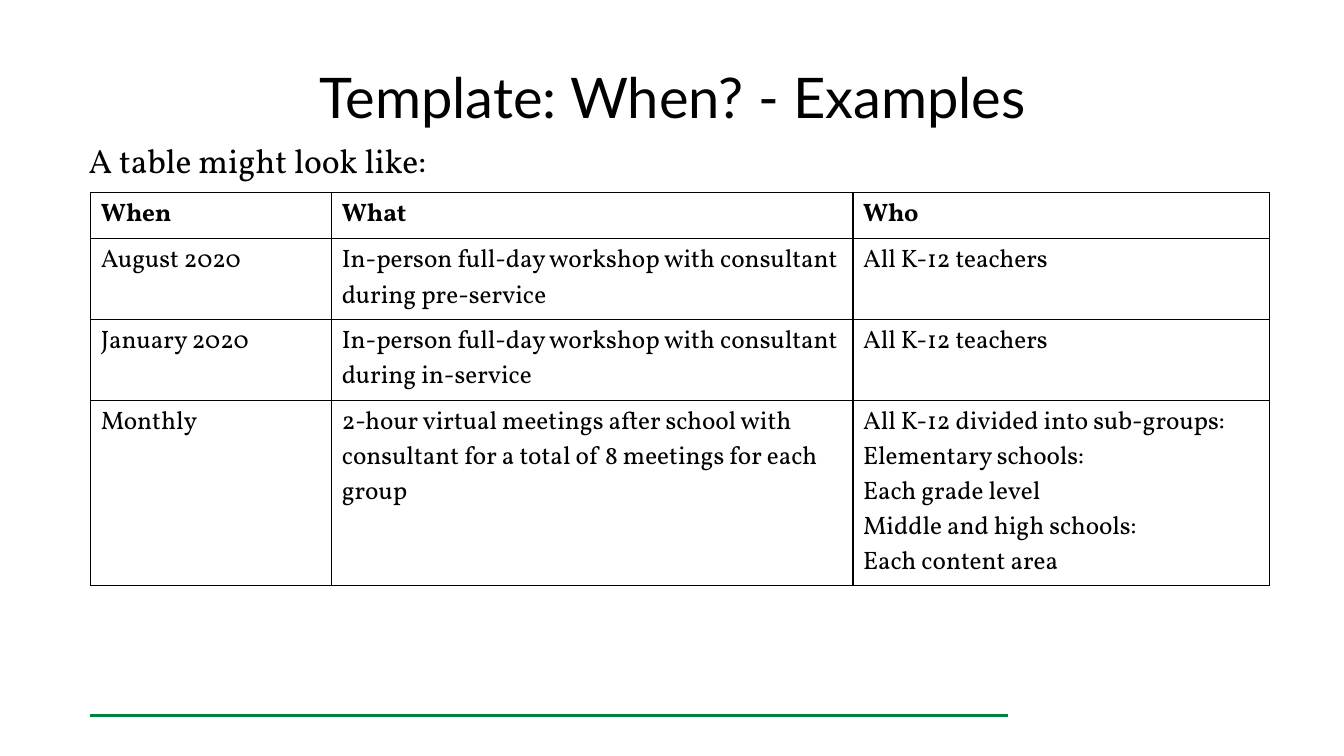
from dataclasses import dataclass

from lxml.etree import SubElement
from pptx import Presentation
from pptx.dml.color import RGBColor
from pptx.enum.shapes import MSO_CONNECTOR as Connector
from pptx.enum.text import MSO_ANCHOR as Anchor, MSO_AUTO_SIZE as AutoSize, PP_ALIGN as Align
from pptx.oxml.ns import qn
from pptx.util import Inches, Pt


@dataclass(frozen=True)
class Theme:
    heading_font: str = "Lato"
    body_font: str = "Vollkorn"
    title_size: int = 40
    lead_size: int = 24
    table_size: int = 18
    ink: str = "000000"
    accent: str = "00823E"
    border_width: float = 1
    rule_width: float = 2.25


SCHEDULE = [
    ("When", "What", "Who"),
    ("August 2020",
     "In-person full-day workshop with consultant during pre-service",
     "All K-12 teachers"),
    ("January 2020",
     "In-person full-day workshop with consultant during in-service",
     "All K-12 teachers"),
    ("Monthly",
     "2-hour virtual meetings after school with consultant for a total of 8 meetings for each group",
     "All K-12 divided into sub-groups:\nElementary schools:\nEach grade level\n"
     "Middle and high schools:\nEach content area"),
]
COLUMN_WIDTHS = (2.39, 5.17, 4.13)
ROW_HEIGHTS = (0.46, 0.8, 0.8, 1.84)


def write(frame, text, *, font, size, color, bold=False, align=Align.LEFT):
    """Fill a text frame, one paragraph for each line of text."""
    frame.word_wrap = True
    for index, line in enumerate(text.split("\n")):
        para = frame.add_paragraph() if index else frame.paragraphs[0]
        para.alignment = align
        para.space_before = Pt(0)
        span = para.add_run()
        span.text = line
        span.font.name = font
        span.font.size = Pt(size)
        span.font.bold = bold
        span.font.color.rgb = RGBColor.from_string(color)


def add_borders(cell, color, width):
    properties = cell._tc.get_or_add_tcPr()
    for position, side in enumerate(("lnL", "lnR", "lnT", "lnB")):
        border = properties.makeelement(qn(f"a:{side}"), {"w": str(Pt(width))})
        fill = SubElement(border, qn("a:solidFill"))
        SubElement(fill, qn("a:srgbClr"), val=color)
        properties.insert(position, border)


class SlideBuilder:
    def __init__(self, page, theme):
        self.page = page
        self.theme = theme

    def place(self, box, left, top, width, height):
        box.left, box.top = Inches(left), Inches(top)
        box.width, box.height = Inches(width), Inches(height)
        box.text_frame.auto_size = AutoSize.NONE

    def title(self, text, *area):
        box = self.page.shapes.title
        self.place(box, *area)
        box.text_frame.vertical_anchor = Anchor.MIDDLE
        write(box.text_frame, text, font=self.theme.heading_font,
              size=self.theme.title_size, color=self.theme.ink, align=Align.CENTER)

    def lead(self, text, *area):
        """Put an unbulleted introduction in the body placeholder."""
        box = self.page.placeholders[1]
        self.place(box, *area)
        write(box.text_frame, text, font=self.theme.body_font,
              size=self.theme.lead_size, color=self.theme.ink)
        properties = box.text_frame.paragraphs[0]._p.get_or_add_pPr()
        properties.set("marL", "0")
        properties.set("indent", "0")
        SubElement(properties, qn("a:buNone"))

    def table(self, rows, left, top, widths, heights):
        frame = self.page.shapes.add_table(
            len(rows), len(widths), Inches(left), Inches(top),
            Inches(sum(widths)), Inches(sum(heights)))
        table = frame.table
        table.first_row = table.horz_banding = False
        for column, width in zip(table.columns, widths):
            column.width = Inches(width)
        for row, height in zip(table.rows, heights):
            row.height = Inches(height)
        for row_index, texts in enumerate(rows):
            for column_index, text in enumerate(texts):
                cell = table.cell(row_index, column_index)
                cell.fill.background()
                add_borders(cell, self.theme.ink, self.theme.border_width)
                write(cell.text_frame, text, font=self.theme.body_font,
                      size=self.theme.table_size, color=self.theme.ink,
                      bold=row_index == 0)

    def rule(self, left, right, top):
        line = self.page.shapes.add_connector(
            Connector.STRAIGHT, Inches(left), Inches(top), Inches(right), Inches(top))
        line.line.color.rgb = RGBColor.from_string(self.theme.accent)
        line.line.width = Pt(self.theme.rule_width)
        SubElement(line._element.spPr, qn("a:effectLst"))


def main():
    deck = Presentation()
    deck.slide_width, deck.slide_height = Inches(13.33), Inches(7.5)
    page = deck.slides.add_slide(deck.slide_layouts[1])
    builder = SlideBuilder(page, Theme())
    builder.rule(0.89, 10, 7.1)
    builder.title("Template: When? - Examples", 0.67, 0.33, 12, 1.25)
    builder.lead("A table might look like:", 0.78, 1.34, 11.89, 0.72)
    builder.table(SCHEDULE, 0.9, 1.91, COLUMN_WIDTHS, ROW_HEIGHTS)
    deck.save("out.pptx")


if __name__ == "__main__":
    main()
